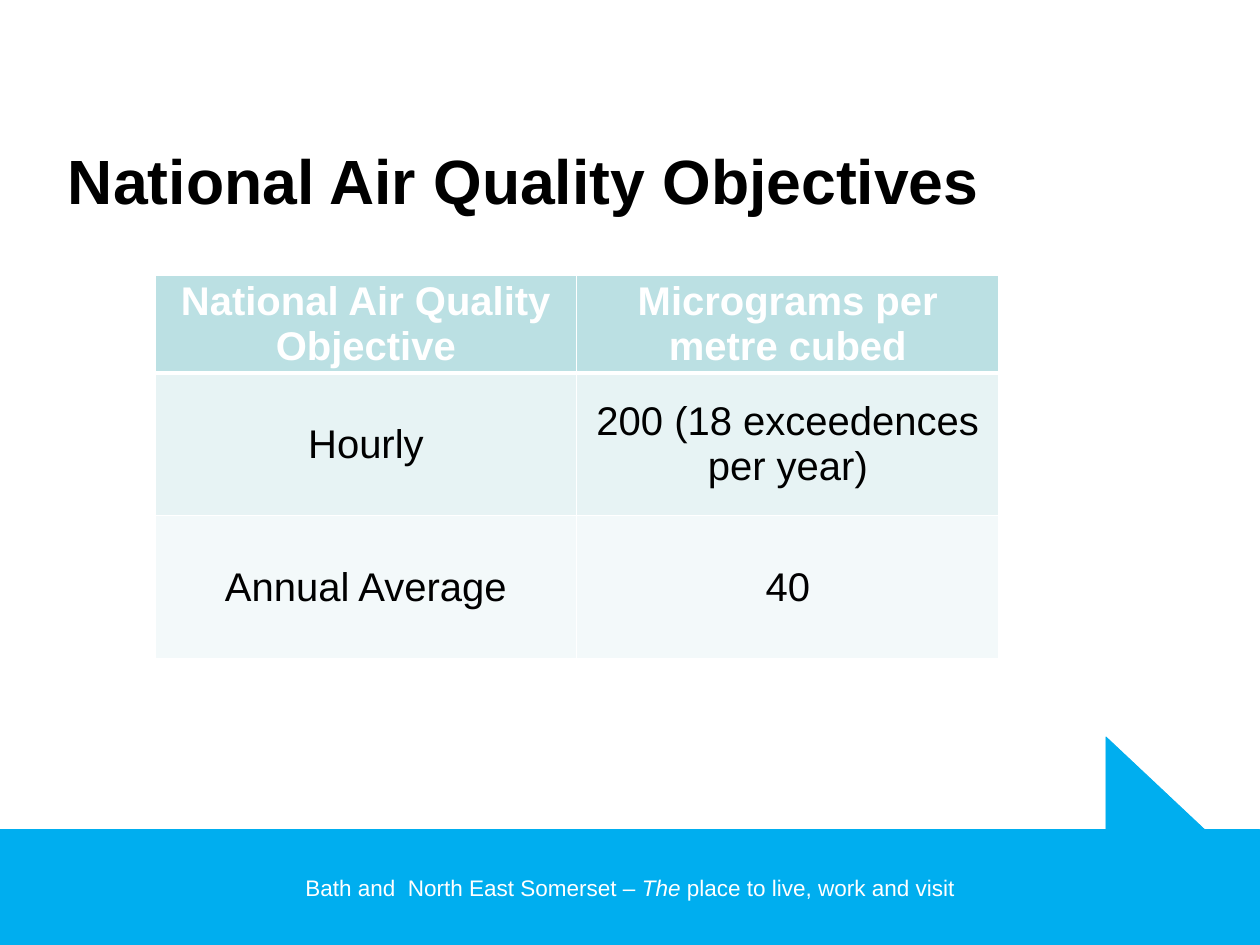
"""Build the National Air Quality Objectives slide."""
import pptx
import pptx.dml.color
import pptx.enum.shapes
import pptx.enum.text
import pptx.oxml
import pptx.oxml.ns
import pptx.util

SCALE = 10160
BLUE, WHITE, BLACK = "00AEEF", "FFFFFF", "000000"
ALIGN = pptx.enum.text.PP_ALIGN
MIDDLE = pptx.enum.text.MSO_ANCHOR.MIDDLE
SHAPE = pptx.enum.shapes.MSO_SHAPE
ROWS = [
    ("BBE0E3", 98, ("National Air Quality Objective", "Micrograms per metre cubed")),
    ("E7F3F4", 143, ("Hourly", "200 (18 exceedences per year)")),
    ("F3F9FA", 143, ("Annual Average", "40")),
]


def px(count):
    return pptx.util.Emu(count * SCALE)


def paint(target, color):
    target.solid()
    target.fore_color.rgb = pptx.dml.color.RGBColor.from_string(color)


def write(frame, runs, size, color, align, bold=False):
    para = frame.paragraphs[0]
    para.alignment = align
    for text, slant in runs:
        run = para.add_run()
        run.text = text
        font = run.font
        font.name, font.size = "Arial", pptx.util.Pt(size)
        font.bold, font.italic = bold, slant
        paint(font.fill, color)


def inset(frame):
    frame.margin_left = frame.margin_right = px(13)
    frame.margin_top = frame.margin_bottom = px(6)
    frame.vertical_anchor = MIDDLE


def add_block(slide, kind, *box):
    shape = slide.shapes.add_shape(kind, *map(px, box))
    shape.shadow.inherit = False
    paint(shape.fill, BLUE)
    paint(shape.line.fill, BLUE)
    shape.line.width = pptx.util.Pt(0.75)
    return shape


def set_title(slide, text, *box):
    title = slide.shapes.title
    title.left, title.top, title.width, title.height = map(px, box)
    frame = title.text_frame
    frame.auto_size = pptx.enum.text.MSO_AUTO_SIZE.NONE
    inset(frame)
    write(frame, [(text, False)], 50, BLACK, ALIGN.LEFT, True)


def edge(cell, side, points):
    space = pptx.oxml.ns.nsdecls("a")
    cell._tc.get_or_add_tcPr().append(pptx.oxml.parse_xml(
        f'<a:ln{side} {space} w="{pptx.util.Pt(points)}"><a:solidFill>'
        f'<a:srgbClr val="{WHITE}"/></a:solidFill></a:ln{side}>'))


def fill_cell(cell, text, color, head, below):
    for side, points in zip("LRTB", (1, 1, 3 if below else 1, 3 if head else 1)):
        edge(cell, side, points)
    paint(cell.fill, color)
    cell.vertical_anchor = MIDDLE
    cell.margin_top = cell.margin_bottom = px(3)
    write(cell.text_frame, [(text, False)], 32, WHITE if head else BLACK, ALIGN.CENTER, head)


def add_grid(slide, left, top, width):
    high = sum(row[1] for row in ROWS)
    table = slide.shapes.add_table(len(ROWS), 2, *map(px, (left, top, width, high))).table
    for i, (color, tall, texts) in enumerate(ROWS):
        table.rows[i].height = px(tall)
        for j, text in enumerate(texts):
            fill_cell(table.cell(i, j), text, color, i == 0, i == 1)


def main():
    deck = pptx.Presentation()
    deck.slide_width, deck.slide_height = px(1260), px(945)
    slide = deck.slides.add_slide(deck.slide_layouts[5])
    add_block(slide, SHAPE.RIGHT_TRIANGLE, 1106, 737, 99, 93)
    band = add_block(slide, SHAPE.RECTANGLE, 0, 830, 1260, 115).text_frame
    inset(band)
    band.word_wrap = False
    write(band, [("Bath and  North East Somerset – ", False), ("The", True),
                 (" place to live, work and visit", False)], 18, WHITE, ALIGN.CENTER)
    set_title(slide, "National Air Quality Objectives", 55, 125, 1042, 109)
    add_grid(slide, 155, 275, 844)
    deck.save("out.pptx")


if __name__ == "__main__":
    main()
